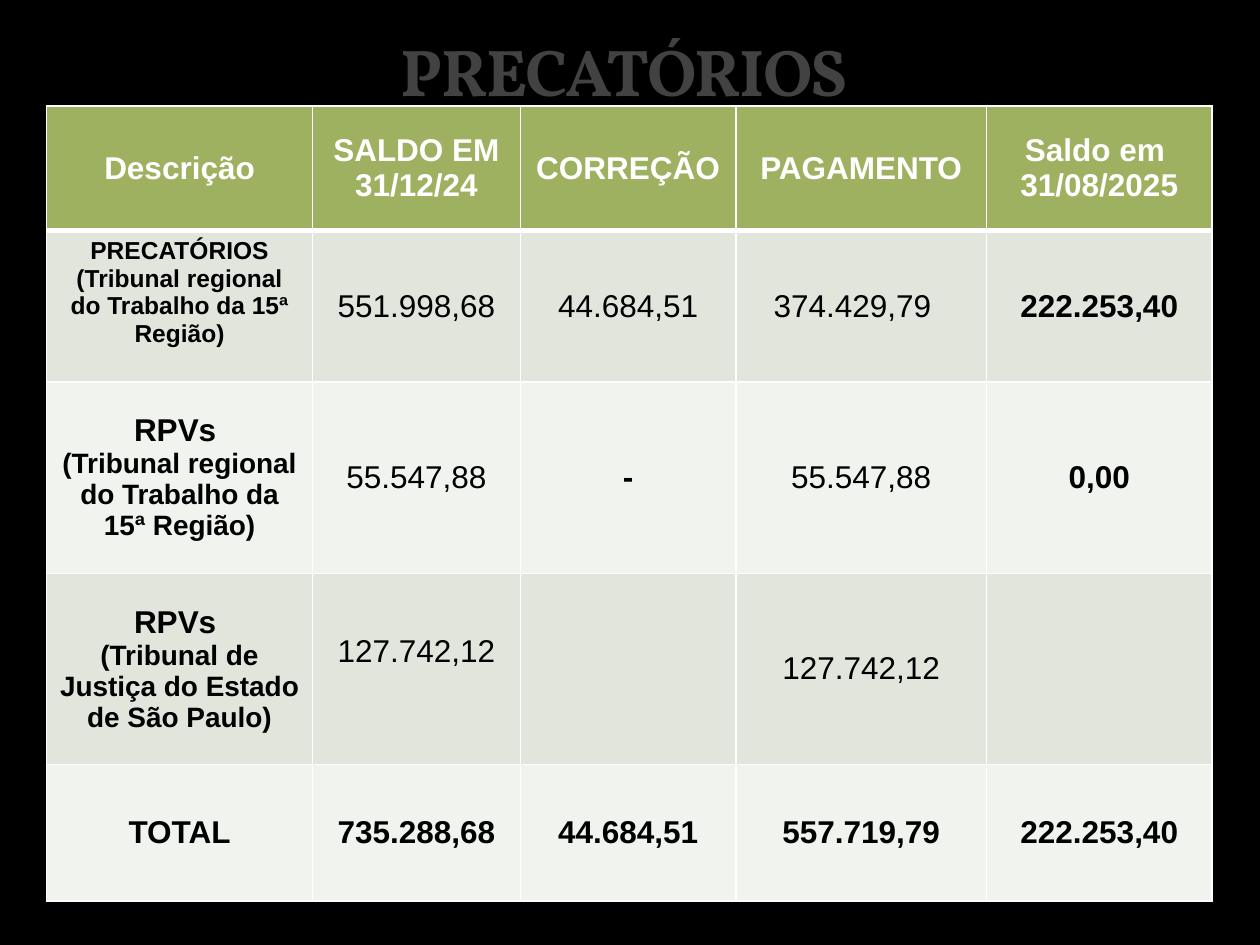
import pptx
import pptx.dml.color
import pptx.enum.text
import pptx.oxml
import pptx.oxml.ns
import pptx.util
from pptx.util import Inches

COLORS = {
    "background": "000000",
    "light": "FFFFFF",
    "dark": "000000",
    "header": "9EB160",
    "odd_row": "E1E5DC",
    "even_row": "F0F3EE",
}
COLUMN_WIDTHS = [2.11, 1.65, 1.71, 1.99, 1.79]
ROW_HEIGHTS = [0.99, 1.2, 1.52, 1.52, 1.08]
HEADINGS = ["Descrição", "SALDO EM 31/12/24", "CORREÇÃO", "PAGAMENTO", "Saldo em \v31/08/2025"]
LABOUR_COURT = "(Tribunal regional do Trabalho da 15ª Região)"
STATE_COURT = "(Tribunal de Justiça do Estado de São Paulo)"
DESCRIPTIONS = [
    [("PRECATÓRIOS", 14), (LABOUR_COURT, 14)],
    [("RPVs ", 18), (LABOUR_COURT, 16)],
    [("RPVs ", 18), (STATE_COURT, 16)],
    [("TOTAL", 18)],
]
AMOUNTS = [
    ["551.998,68", "44.684,51", "374.429,79", "222.253,40"],
    ["55.547,88", "-", "55.547,88", "0,00"],
    ["127.742,12", "", "127.742,12", ""],
    ["735.288,68", "44.684,51", "557.719,79", "222.253,40"],
]


def rgb(name):
    """Return the named palette colour."""
    return pptx.dml.color.RGBColor.from_string(COLORS[name])


class SlideBuilder:
    """Hold the slide and its style, and add each kind of element."""

    def __init__(self, slide, font="Arial", title_font="Vollkorn"):
        """Keep the slide and fonts, and paint the background."""
        self.slide = slide
        self.font = font
        self.title_font = title_font
        slide.background.fill.solid()
        slide.background.fill.fore_color.rgb = rgb("background")

    def style(self, paragraph, size, color, bold, font):
        """Centre a paragraph and set its font."""
        paragraph.alignment = pptx.enum.text.PP_ALIGN.CENTER
        paragraph.font.name = font
        paragraph.font.size = pptx.util.Pt(size)
        paragraph.font.bold = bold
        paragraph.font.color.rgb = rgb(color)

    def title(self, text, left, top, width, height):
        """Place the title in translucent, slightly tightened letters."""
        title = self.slide.shapes.title
        title.left, title.top = Inches(left), Inches(top)
        title.width, title.height = Inches(width), Inches(height)
        frame = title.text_frame
        frame.text = text
        frame.word_wrap = True
        frame.auto_size = pptx.enum.text.MSO_AUTO_SIZE.NONE
        frame.vertical_anchor = pptx.enum.text.MSO_ANCHOR.BOTTOM
        run = frame.paragraphs[0].runs[0]
        self.style(frame.paragraphs[0], 37.8, "light", True, self.title_font)
        run.font.fill.solid()
        run.font.fill.fore_color.rgb = rgb("light")
        properties = run.font.fill._xPr
        properties.set("spc", "-100")
        color = properties.find(".//" + pptx.oxml.ns.qn("a:srgbClr"))
        color.append(pptx.oxml.parse_xml(
            f'<a:alpha {pptx.oxml.ns.nsdecls("a")} val="25000"/>'))

    def table(self, left, top, widths, heights):
        """Add an empty table with the given column widths and row heights."""
        table = self.slide.shapes.add_table(
            len(heights), len(widths), Inches(left), Inches(top),
            Inches(sum(widths)), Inches(sum(heights))).table
        for column, width in zip(table.columns, widths):
            column.width = Inches(width)
        for row, height in zip(table.rows, heights):
            row.height = Inches(height)
        return table

    def cell(self, cell, lines, fill, color, bold, top_line=1, bottom_line=1):
        """Fill one cell with centred (text, size) lines and white borders."""
        cell.vertical_anchor = pptx.enum.text.MSO_ANCHOR.MIDDLE
        frame = cell.text_frame
        for index, (text, size) in enumerate(lines):
            paragraph = frame.add_paragraph() if index else frame.paragraphs[0]
            paragraph.text = text
            self.style(paragraph, size, color, bold, self.font)
        properties = cell._tc.get_or_add_tcPr()
        for side, points in zip("LRTB", (1, 1, top_line, bottom_line)):
            properties.append(pptx.oxml.parse_xml(
                f'<a:ln{side} {pptx.oxml.ns.nsdecls("a")} w="{pptx.util.Pt(points)}">'
                f'<a:solidFill><a:srgbClr val="{COLORS["light"]}"/></a:solidFill>'
                f'</a:ln{side}>'))
        cell.fill.solid()
        cell.fill.fore_color.rgb = rgb(fill)


def main():
    """Build the slide of court-ordered debts and save it."""
    presentation = pptx.Presentation()
    presentation.slide_width, presentation.slide_height = Inches(10), Inches(7.5)
    builder = SlideBuilder(presentation.slides.add_slide(presentation.slide_layouts[5]))
    builder.title("PRECATÓRIOS ", 0.5, 0.14, 9, 0.78)
    balances = builder.table(0.37, 0.84, COLUMN_WIDTHS, ROW_HEIGHTS)

    for column, heading in enumerate(HEADINGS):
        builder.cell(balances.cell(0, column), [(heading, 18)], "header", "light", True,
                     bottom_line=3)
    for row, (description, amounts) in enumerate(zip(DESCRIPTIONS, AMOUNTS), start=1):
        fill = "odd_row" if row % 2 else "even_row"
        top_line = 3 if row == 1 else 1
        builder.cell(balances.cell(row, 0), description, fill, "dark", True, top_line)
        for column, amount in enumerate(amounts, start=1):
            bold = row == len(AMOUNTS) or column == len(amounts) or amount == "-"
            builder.cell(balances.cell(row, column), [(amount, 18)], fill, "dark", bold,
                         top_line)

    balances.cell(1, 0).margin_bottom = Inches(0.27)
    balances.cell(1, 3).margin_right = Inches(0.24)
    balances.cell(3, 1).margin_bottom = Inches(0.33)
    presentation.save("out.pptx")


if __name__ == "__main__":
    main()
